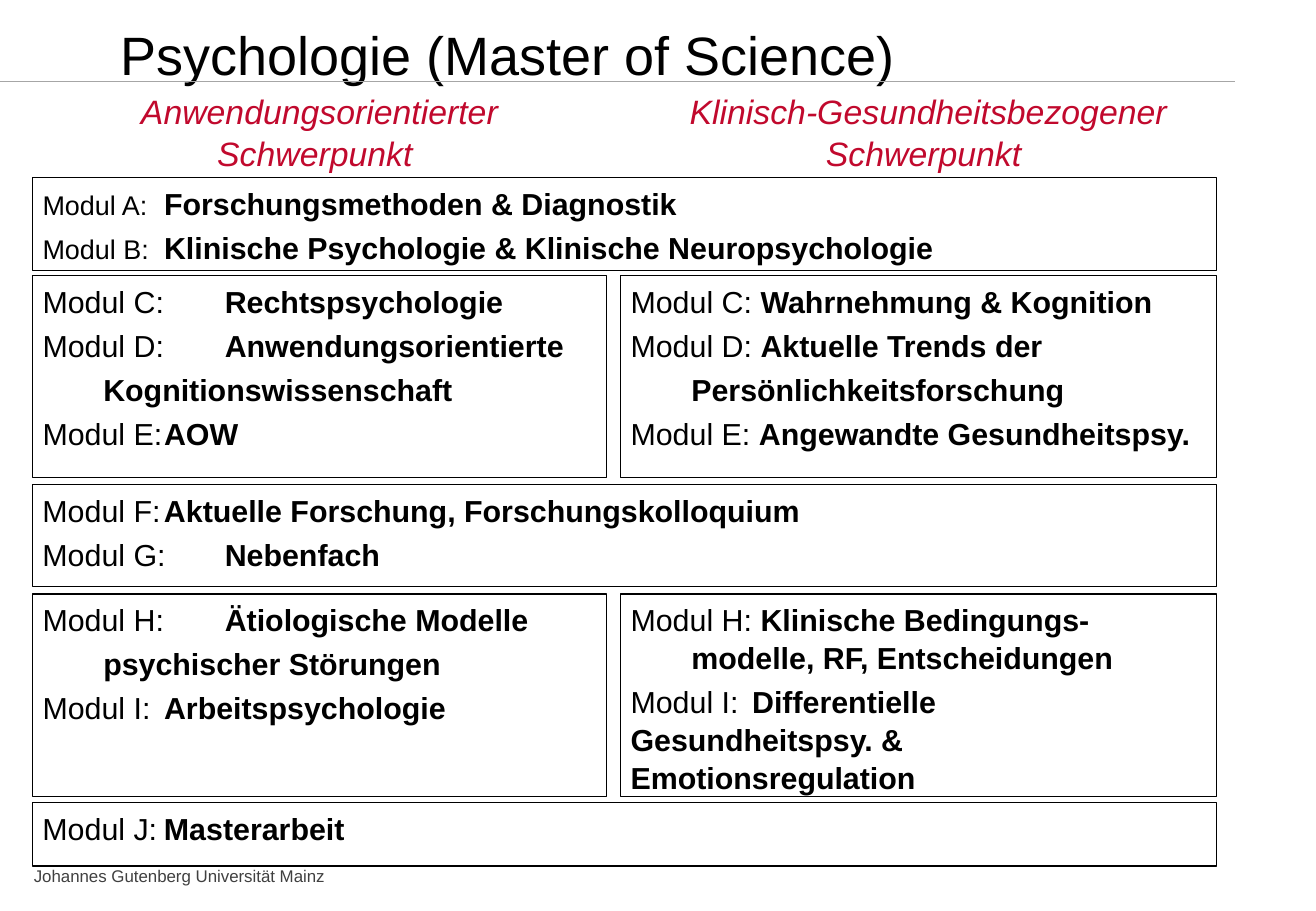
import pptx
import pptx.util
import pptx.dml.color
import pptx.enum.text
import pptx.enum.shapes
import pptx.oxml
import pptx.oxml.ns

Inch, Pt = pptx.util.Inches, pptx.util.Pt
ALIGN = pptx.enum.text.PP_ALIGN

COLORS = {"ink": "000000", "red": "C1092D", "gray": "404040", "rule": "A6A6A6"}
TITLE = "Psychologie (Master of Science)"
FOOT = "Johannes Gutenberg Universität Mainz"
HEADS = ["Anwendungsorientierter Schwerpunkt ",
         "Klinisch-Gesundheitsbezogener Schwerpunkt "]

# Each box: column, row, tab stops, label size, lines of (label, bold text)
BOXES = [
    ("full", 0, [1.5], 16, [
        ("Modul A:\t", "Forschungsmethoden & Diagnostik"),
        ("Modul B:\t", "Klinische Psychologie & Klinische Neuropsychologie")]),
    ("left", 1, [1.5], 18, [
        ("Modul C:\t", "Rechtspsychologie"),
        ("Modul D:\t", "Anwendungsorientierte"),
        ("", "\tKognitionswissenschaft"),
        ("Modul E:\t", "AOW")]),
    ("right", 1, [1.07], 18, [
        ("Modul C: ", "Wahrnehmung & Kognition"),
        ("Modul D: ", "Aktuelle Trends der"),
        ("", "\tPersönlichkeitsforschung"),
        ("Modul E: ", "Angewandte Gesundheitspsy.")]),
    ("full", 2, [1.5], 18, [
        ("Modul F:\t", "Aktuelle Forschung, Forschungskolloquium"),
        ("Modul G:\t", "Nebenfach")]),
    ("left", 3, [1.5], 18, [
        ("Modul H:\t", "Ätiologische Modelle"),
        ("", "\tpsychischer Störungen"),
        ("Modul I:\t", "Arbeitspsychologie")]),
    ("right", 3, [0.49, 1.0], 18, [
        ("Modul H: ", "Klinische Bedingungs-\n\tmodelle, RF, Entscheidungen"),
        ("Modul I:\t", "Differentielle\nGesundheitspsy. &\nEmotionsregulation")]),
    ("full", 4, [1.5], 18, [("Modul J:\t", "Masterarbeit")]),
]
COLS = {"full": (0.27, 9.74), "left": (0.27, 4.72), "right": (5.11, 4.9)}
ROWS = [(1.46, 0.77), (2.27, 1.66), (3.99, 0.84), (4.89, 1.67), (6.61, 0.52)]


def rgb(name):
    return pptx.dml.color.RGBColor.from_string(COLORS[name])


def place(shape, left, top, width, height, side=0.1):
    """Set bounds and insets; return the text frame."""
    shape.left, shape.top = Inch(left), Inch(top)
    shape.width, shape.height = Inch(width), Inch(height)
    frame = shape.text_frame
    frame.word_wrap = True
    frame.auto_size = pptx.enum.text.MSO_AUTO_SIZE.NONE
    frame.vertical_anchor = pptx.enum.text.MSO_ANCHOR.TOP
    frame.margin_left = frame.margin_right = Inch(side)
    frame.margin_top = frame.margin_bottom = Inch(0.05)
    return frame


def style(para, first=True, align=ALIGN.LEFT, space=1.0, tabs=()):
    """Set spacing, then drop the bullet and add tab stops."""
    para.alignment, para.line_spacing = align, space
    para.space_before = Pt(0 if first else 3.6)
    props = para._p.get_or_add_pPr()
    props.set("marL", "0")
    props.set("indent", "0")
    make = pptx.oxml.ns.qn
    props.append(props.makeelement(make("a:buNone"), {}))
    if tabs:
        stops = props.makeelement(make("a:tabLst"), {})
        for pos in tabs:
            stops.append(stops.makeelement(
                make("a:tab"), {"pos": str(Inch(pos)), "algn": "l"}))
        props.append(stops)


def write(para, text, size, color="ink", bold=False, italic=False):
    """Add one run for each line of the text."""
    for num, line in enumerate(text.split("\n")):
        if num:
            para.add_line_break()
        run = para.add_run()
        run.text = line
        font = run.font
        font.name, font.size = "Arial", Pt(size)
        font.bold, font.italic = bold, italic
        font.color.rgb = rgb(color)


deck = pptx.Presentation()
deck.slide_width, deck.slide_height = Inch(10.83), Inch(7.5)
slide = deck.slides.add_slide(deck.slide_layouts[4])
shapes = slide.shapes
holders = {item.placeholder_format.idx: item for item in slide.placeholders}

rule = shapes.add_connector(pptx.enum.shapes.MSO_CONNECTOR.STRAIGHT,
                            0, Inch(0.67), Inch(10.16), Inch(0.67))
rule.line.color.rgb, rule.line.width = rgb("rule"), Pt(0.75)
props = rule._element.spPr
props.append(props.makeelement(pptx.oxml.ns.qn("a:effectLst"), {}))

para = place(shapes.title, 0.89, 0.13, 8.62, 0.77).paragraphs[0]
style(para)
write(para, TITLE, 32)

foot = shapes.add_textbox(0, 0, 0, 0)
para = place(foot, 0.18, 7.08, 5.15, 0.33).paragraphs[0]
style(para)
write(para, FOOT, 10, "gray")

for idx, left, head in zip((1, 3), (0.27, 5.28), HEADS):
    para = place(holders[idx], left, 0.68, 4.72, 0.72).paragraphs[0]
    style(para, align=ALIGN.CENTER, space=1.04)
    write(para, head, 20, "red", italic=True)

spare = [holders[2], holders[4]]
for col, row, tabs, size, lines in BOXES:
    if spare:
        box = spare.pop(0)
    else:
        box = shapes.add_shape(pptx.enum.shapes.MSO_SHAPE.RECTANGLE, 0, 0, 0, 0)
        box.shadow.inherit = False
    box.fill.background()
    box.line.color.rgb, box.line.width = rgb("ink"), Pt(0.75)
    (left, width), (top, height) = COLS[col], ROWS[row]
    frame = place(box, left, top, width, height, 0.08)
    for num, (label, name) in enumerate(lines):
        para = frame.add_paragraph() if num else frame.paragraphs[0]
        style(para, first=not num, space=1.04, tabs=tabs)
        if label:
            write(para, label, size)
        write(para, name, 18, bold=True)

deck.save("out.pptx")
